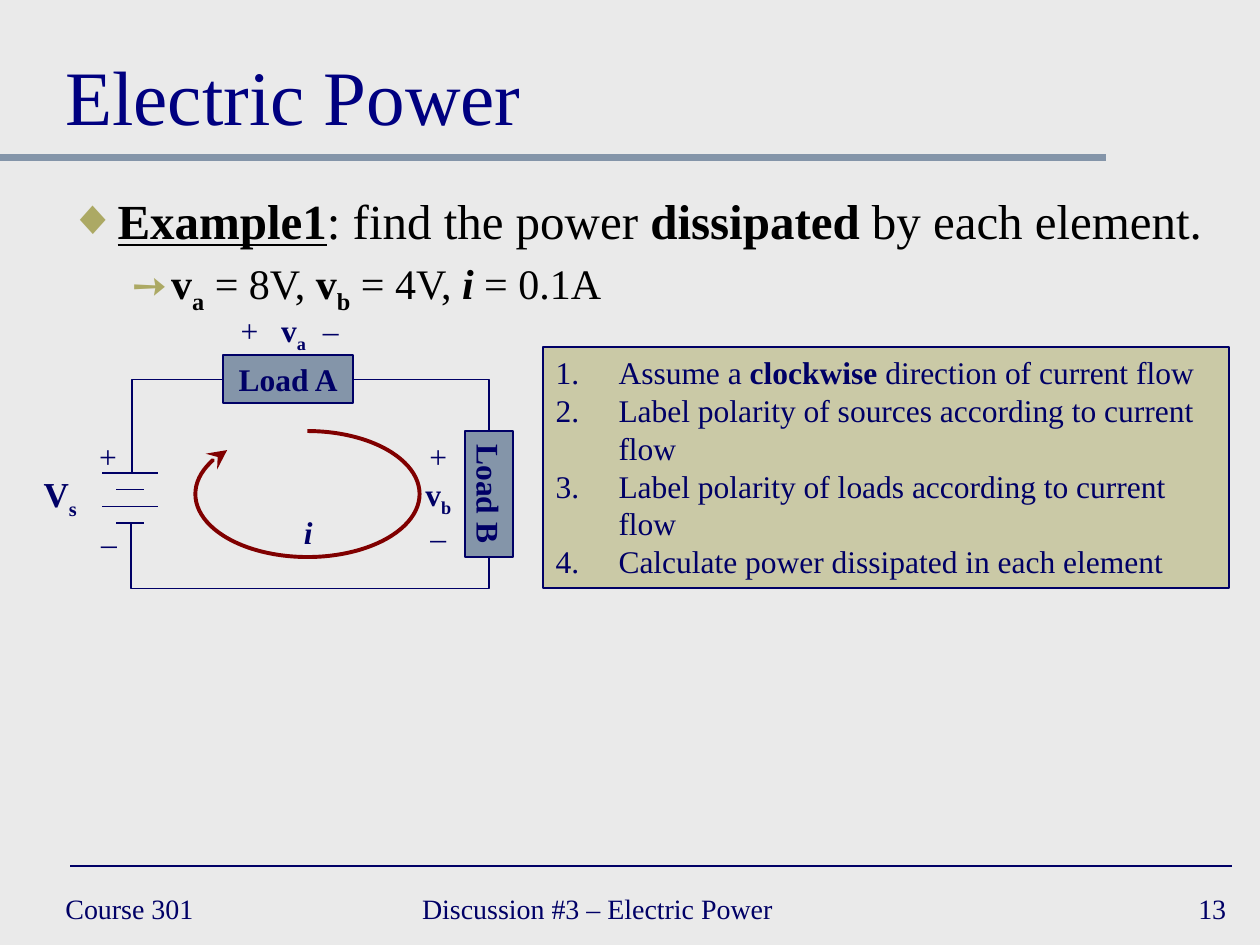
from lxml.etree import SubElement
from pptx import Presentation
from pptx.dml.color import RGBColor
from pptx.enum.shapes import MSO_CONNECTOR, MSO_SHAPE
from pptx.enum.text import MSO_ANCHOR, MSO_AUTO_SIZE, PP_ALIGN
from pptx.oxml.ns import qn
from pptx.util import Cm, Pt

# Content: a run is (text, flags); b bold, i italic, u underline, s subscript
NAVY, STEEL, OLIVE, RED = "000066", "8495A9", "ACA964", "800000"
FONT = "Times New Roman"
TITLE = [[("Electric Power", "")]]
BODY = [
    [("Example1", "bu"), (": find the power ", ""), ("dissipated", "b"),
     (" by each element.", "")],
    [("v", "b"), ("a", "bs"), (" = 8V, ", ""), ("v", "b"), ("b", "bs"),
     (" = 4V, ", ""), ("i", "bi"), (" = 0.1A", "")],
]
BODY_LEVELS = [  # size, bullet, left margin, indent, space before
    (28, "◆", 0.95, -0.95, 0),
    (24, "➙", 2.06, -0.79, 4.8),
]
STEPS = [
    [("Assume a ", ""), ("clockwise", "b"), (" direction of current flow", "")],
    [("Label polarity of sources according to current flow", "")],
    [("Label polarity of loads according to current flow", "")],
    [("Calculate power dissipated in each element", "")],
]
FOOTERS = [  # text, left, width, alignment
    ("Course 301", 1.07, 5.5, PP_ALIGN.LEFT),
    ("Discussion #3 – Electric Power", 8.26, 9.73, PP_ALIGN.LEFT),
    ("13", 19.69, 5.28, PP_ALIGN.RIGHT),
]
LABELS = [  # paragraphs, box, size
    ([[("+", "")], [("v", "b"), ("b", "bs")], [("–", "")]],
     (8.3, 8.69, 1.07, 2.54), 18),
    ([[("+", "")]], (1.75, 8.69, 0.86, 1.02), 18),
    ([[("_", "")]], (1.78, 10.21, 0.84, 1.02), 18),
    ([[("V", "b"), ("s", "bs")]], (0.62, 9.4, 1.19, 1.09), 20),
    ([[("i", "bi")]], (5.87, 10.21, 0.69, 1.02), 18),
]
LOADS = [("Load A", (4.5, 7.16, 2.62, 0.97), 0),
         ("Load B", (8.59, 9.47, 2.54, 0.97), 90)]
WIRES = [  # start, end, preset, bend positions
    ((4.5, 7.65), (2.66, 9.52), "bentConnector2", []),
    ((7.12, 7.65), (9.86, 8.69), "bentConnector2", []),
    ((2.64, 10.54), (9.86, 11.23), "bentConnector4", [100, 192300]),
]
PLATE_X, PLATE_Y, PLATE_STEP, PLATE_HALVES = 2.62, 9.53, 0.34, (0.56, 0.28) * 2


def rgb(value):
    return RGBColor.from_string(value)


def cm(values):
    return [Cm(v) for v in values]


def write(sp, paragraphs, size, color=NAVY, align=PP_ALIGN.LEFT,
          anchor=MSO_ANCHOR.TOP, wrap=True):
    tf = sp.text_frame
    frame = {"word_wrap": wrap, "auto_size": MSO_AUTO_SIZE.NONE,
             "vertical_anchor": anchor,
             "margin_left": Cm(0.25), "margin_right": Cm(0.25),
             "margin_top": Cm(0.13), "margin_bottom": Cm(0.13)}
    for name, value in frame.items():
        setattr(tf, name, value)
    for n, runs in enumerate(paragraphs):
        p = tf.paragraphs[0] if n == 0 else tf.add_paragraph()
        p.alignment = align
        for text, flags in runs:
            r = p.add_run()
            r.text = text
            style = {"name": FONT, "size": Pt(size), "bold": "b" in flags,
                     "italic": "i" in flags, "underline": "u" in flags}
            for name, value in style.items():
                setattr(r.font, name, value)
            r.font.color.rgb = rgb(color)
            if "s" in flags:
                r.font._element.set("baseline", "-25000")
    return tf


def indent(p, left, first):
    pPr = p._p.get_or_add_pPr()
    pPr.set("marL", str(Cm(left)))
    pPr.set("indent", str(Cm(first)))
    return pPr


def add_text(s, paragraphs, box, size, **options):
    sp = s.shapes.add_textbox(*cm(box))
    return write(sp, paragraphs, size, **options)


def add_shape(s, kind, box, fill=None, line=NAVY, width=1):
    sp = s.shapes.add_shape(kind, *cm(box))
    sp.shadow.inherit = False
    if fill:
        sp.fill.solid()
        sp.fill.fore_color.rgb = rgb(fill)
    else:
        sp.fill.background()
    sp.line.color.rgb = rgb(line)
    sp.line.width = Pt(width)
    return sp


def add_line(s, start, end, color=NAVY, width=1, kind=MSO_CONNECTOR.STRAIGHT):
    line = s.shapes.add_connector(kind, *cm(start + end))
    line.line.color.rgb = rgb(color)
    line.line.width = Pt(width)
    SubElement(line._element.spPr, qn("a:effectLst"))
    return line


def add_wire(s, start, end, preset, bends):
    wire = add_line(s, start, end, kind=MSO_CONNECTOR.ELBOW)
    geom = wire._element.spPr.find(qn("a:prstGeom"))
    geom.set("prst", preset)
    guides = geom.find(qn("a:avLst"))
    if guides is None:
        guides = SubElement(geom, qn("a:avLst"))
    for n, bend in enumerate(bends, 1):
        SubElement(guides, qn("a:gd"), name=f"adj{n}", fmla=f"val {bend}")


def main():
    prs = Presentation()
    prs.slide_width, prs.slide_height = Cm(25.4), Cm(19.05)
    s = prs.slides.add_slide(prs.slide_layouts[1])
    s.background.fill.solid()
    s.background.fill.fore_color.rgb = rgb("EAEAEA")

    # Rules and footer
    add_line(s, (0, 3.18), (22.3, 3.18), STEEL, 4)
    add_line(s, (1.42, 17.46), (24.84, 17.46))
    for text, left, width, align in FOOTERS:
        add_text(s, [[(text, "")]], (left, 17.78, width, 1.07), 16,
                 align=align, anchor=MSO_ANCHOR.MIDDLE)

    # Title and body
    title, body = s.shapes.title, s.placeholders[1]
    for sp, box in ((title, (1.07, 0.43, 23.29, 2.54)),
                    (body, (1.14, 3.71, 23.65, 3.91))):
        sp.left, sp.top, sp.width, sp.height = cm(box)
    write(title, TITLE, 44, "000080", anchor=MSO_ANCHOR.BOTTOM)
    tf = write(body, BODY, 28, "000000")
    for n, (p, form) in enumerate(zip(tf.paragraphs, BODY_LEVELS)):
        size, bullet, left, first, before = form
        p.level, p.space_before = n, Pt(before)
        pPr = indent(p, left, first)
        SubElement(SubElement(pPr, qn("a:buClr")), qn("a:srgbClr"), val=OLIVE)
        SubElement(pPr, qn("a:buChar"), char=bullet)
        for r in p.runs:
            r.font.size = Pt(size)

    # Solution steps
    sp = add_shape(s, MSO_SHAPE.RECTANGLE, (10.95, 6.99, 13.82, 4.87), OLIVE)
    fill_color = sp._element.spPr.find(qn("a:solidFill"))[0]
    SubElement(fill_color, qn("a:alpha"), val="50000")
    for p in write(sp, STEPS, 18).paragraphs:
        SubElement(indent(p, 1.27, -1.27), qn("a:buAutoNum"),
                   type="arabicPeriod")

    # Circuit wires, loads and battery
    for wire in WIRES:
        add_wire(s, *wire)
    for name, box, angle in LOADS:
        sp = add_shape(s, MSO_SHAPE.RECTANGLE, box, STEEL)
        sp.rotation = angle
        write(sp, [[(name, "b")]], 18, align=PP_ALIGN.CENTER,
              anchor=MSO_ANCHOR.MIDDLE, wrap=False)
    for n, half in enumerate(PLATE_HALVES):
        y = PLATE_Y + n * PLATE_STEP
        add_line(s, (PLATE_X - half, y), (PLATE_X + half, y))

    # Current loop: angles in degrees, 0.6 adjustment units each
    loop = add_shape(s, MSO_SHAPE.ARC, (3.94, 8.69, 4.52, 2.54),
                     line=RED, width=2.25)
    for n, degrees in enumerate((270, 208.7)):
        loop.adjustments[n] = degrees * 0.6
    SubElement(loop.line._get_or_add_ln(), qn("a:tailEnd"),
               type="stealth", w="lg", len="lg")

    # Circuit labels
    for paragraphs, box, size in LABELS:
        add_text(s, paragraphs, box, size, align=PP_ALIGN.CENTER, wrap=False)
    tf = add_text(s, [[("+\t", ""), ("v", "b"), ("a", "bs"), ("\t–", "")]],
                  (4.6, 6.15, 2.8, 1.02), 18)
    tabs = SubElement(tf.paragraphs[0]._p.get_or_add_pPr(), qn("a:tabLst"))
    for stop in (0.82, 1.66):
        SubElement(tabs, qn("a:tab"), pos=str(Cm(stop)), algn="l")

    prs.save("out.pptx")


if __name__ == "__main__":
    main()
